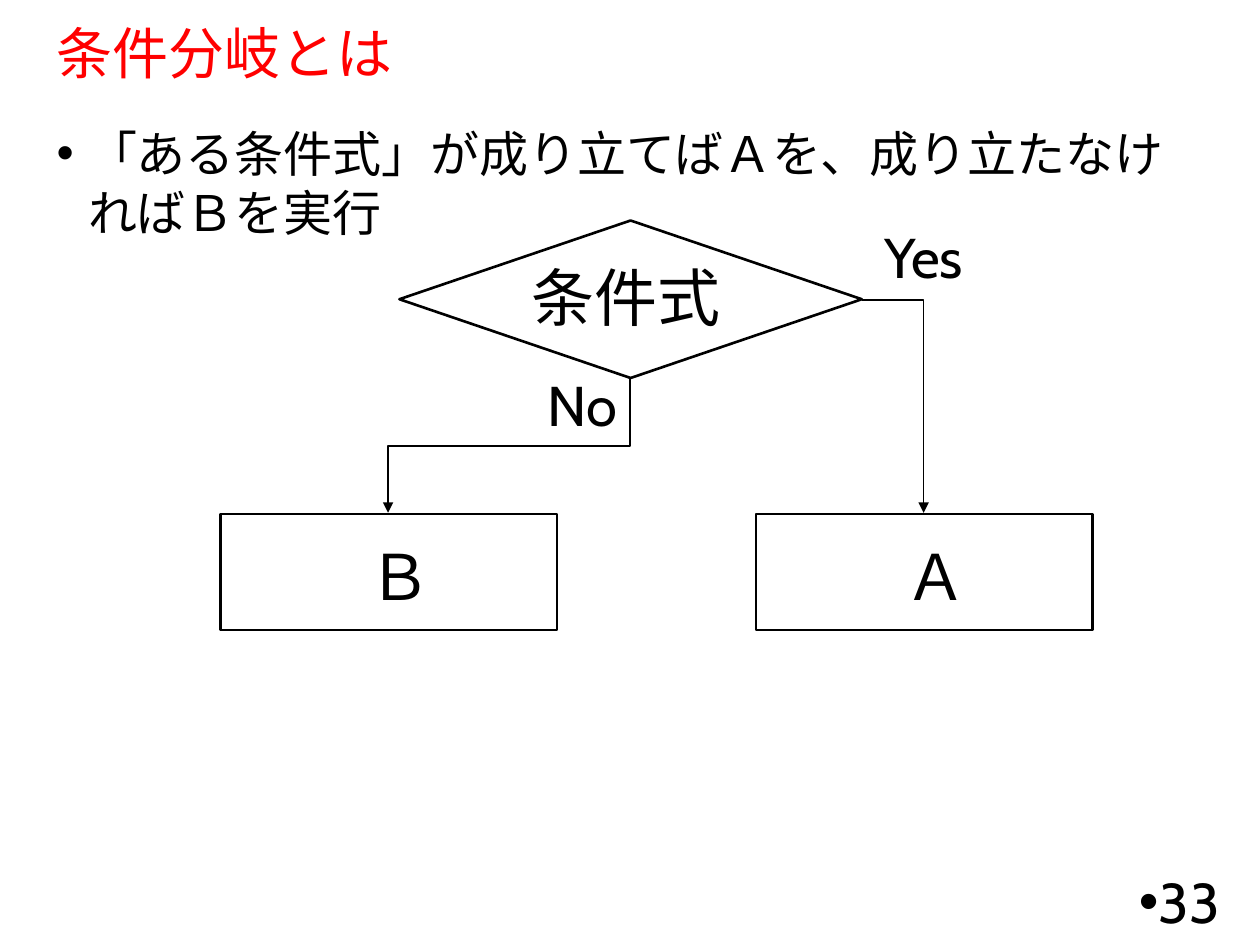
import dataclasses

import pptx
import pptx.dml.color
import pptx.enum.shapes
import pptx.enum.text
import pptx.oxml.ns
import pptx.oxml.xmlchemy
import pptx.util
from pptx.util import Inches

qn = pptx.oxml.ns.qn
ALIGN = pptx.enum.text.PP_ALIGN
ANCHOR = pptx.enum.text.MSO_ANCHOR
SHAPE = pptx.enum.shapes.MSO_SHAPE


@dataclasses.dataclass(frozen=True)
class Theme:
    font: str = "Cabin"
    ink: pptx.dml.color.RGBColor = pptx.dml.color.RGBColor(0, 0, 0)
    title: pptx.dml.color.RGBColor = pptx.dml.color.RGBColor(255, 0, 0)
    body_size: int = 28
    label_size: int = 32
    node_size: int = 36
    outline: float = 1.5
    arrow: float = 0.75


theme = Theme()
deck = pptx.Presentation()
deck.slide_width, deck.slide_height = Inches(10), Inches(7.5)
page = deck.slides.add_slide(deck.slide_layouts[6])


def add_text(text, left, top, width, height, size=theme.label_size, color=theme.ink,
             align=ALIGN.LEFT, anchor=ANCHOR.TOP, wrap=True, bullet=False,
             hanging=0, line_spacing=None):
    box = page.shapes.add_textbox(Inches(left), Inches(top), Inches(width), Inches(height))
    box.text_frame.word_wrap = wrap
    box.text_frame.vertical_anchor = anchor
    para = box.text_frame.paragraphs[0]
    para.alignment = align
    if line_spacing:
        para.line_spacing = line_spacing
    if bullet:
        properties = para._p.get_or_add_pPr()
        properties.set("marL", str(Inches(hanging)))
        properties.set("indent", str(-Inches(hanging)))
        for tag, key, value in (("a:buFont", "typeface", "Arial"), ("a:buChar", "char", "•")):
            mark = pptx.oxml.xmlchemy.OxmlElement(tag)
            mark.set(key, value)
            properties.append(mark)
    span = para.add_run()
    span.text = text
    span.font.name = theme.font
    span.font.size = pptx.util.Pt(size)
    span.font.color.rgb = color


# Title, statement and page number
add_text("条件分岐とは", 0.35, 0.19, 9.25, 0.51, color=theme.title,
         anchor=ANCHOR.MIDDLE, line_spacing=0.9)
add_text("「ある条件式」が成り立てばＡを、成り立たなければＢを実行", 0.35, 0.93, 9.25, 5.83,
         size=theme.body_size, bullet=True, hanging=0.25)
add_text("33", 7.53, 6.95, 2.25, 0.4, align=ALIGN.RIGHT, anchor=ANCHOR.MIDDLE, bullet=True)

# Flowchart outlines: the decision and its two branches
for kind, left, top, width, height in (
    (SHAPE.FLOWCHART_DECISION, 3.17, 1.75, 3.67, 1.25),
    (SHAPE.FLOWCHART_PROCESS, 1.75, 4.08, 2.67, 0.92),
    (SHAPE.FLOWCHART_PROCESS, 6, 4.08, 2.67, 0.92),
):
    node = page.shapes.add_shape(kind, Inches(left), Inches(top), Inches(width), Inches(height))
    node.shadow.inherit = False
    node.fill.background()
    node.line.color.rgb = theme.ink
    node.line.width = pptx.util.Pt(theme.outline)

# Elbow arrows; the No arrow is laid out sideways and turned a quarter clockwise
for preset, left, top, right, bottom, degrees in (
    ("bentConnector3", 3.51, 2.58, 4.57, 4.5, 90),
    ("bentConnector2", 6.84, 2.38, 7.33, 4.07, 0),
):
    arrow = page.shapes.add_connector(pptx.enum.shapes.MSO_CONNECTOR.ELBOW,
                                      Inches(left), Inches(top), Inches(right), Inches(bottom))
    arrow.line.color.rgb = theme.ink
    arrow.line.width = pptx.util.Pt(theme.arrow)
    properties = arrow._element.spPr
    properties.find(qn("a:prstGeom")).set("prst", preset)
    if degrees:
        properties.find(qn("a:xfrm")).set("rot", str(degrees * 60000))
    head = pptx.oxml.xmlchemy.OxmlElement("a:tailEnd")
    head.set("type", "triangle")
    properties.find(qn("a:ln")).append(head)
    properties.append(pptx.oxml.xmlchemy.OxmlElement("a:effectLst"))

# Branch labels
add_text("Yes", 6.92, 1.72, 0.93, 0.64, wrap=False)
add_text("No", 4.25, 2.89, 0.78, 0.64, wrap=False)

# Node labels
for letter, left in (("Ｂ", 2.83), ("Ａ", 7.08)):
    add_text(letter, left, 4.22, 0.71, 0.71, size=theme.node_size, wrap=False)
add_text("条件式", 4.1, 2, 1.74, 0.7, size=theme.node_size, align=ALIGN.CENTER)

deck.save("out.pptx")
